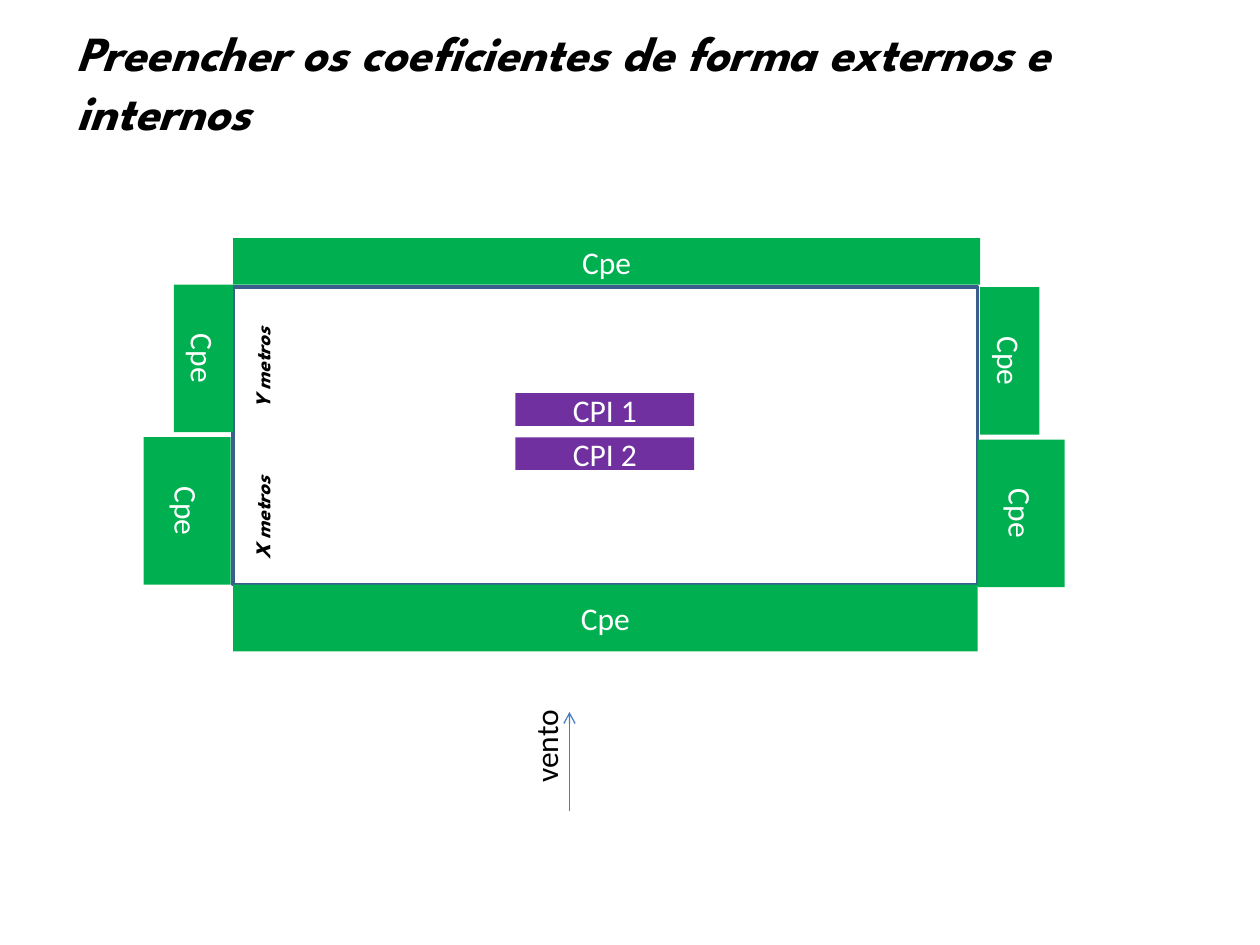
from pptx import Presentation
from pptx.dml.color import RGBColor
from pptx.enum.shapes import MSO_CONNECTOR, MSO_SHAPE
from pptx.enum.text import MSO_ANCHOR, MSO_AUTO_SIZE, PP_ALIGN
from pptx.oxml.ns import qn
from pptx.util import Inches, Pt
from lxml.etree import SubElement

BLACK = RGBColor(0x00, 0x00, 0x00)
WHITE = RGBColor(0xFF, 0xFF, 0xFF)
GREEN = RGBColor(0x00, 0xB0, 0x50)
PURPLE = RGBColor(0x70, 0x30, 0xA0)
WALL_BLUE = RGBColor(0x3A, 0x5F, 0x8C)
ARROW_BLUE = RGBColor(0x4B, 0x7E, 0xBC)

TITLE_ONLY = 5
SIDEWAYS = 270


class WindDiagram:
    display_font = "League Spartan"
    body_font = "Calibri"

    def __init__(self, slide):
        self.slide = slide

    def add_run(self, paragraph, text, size, color, display=False):
        run = paragraph.add_run()
        run.text = text
        font = run.font
        font.name = self.display_font if display else self.body_font
        font.size = Pt(size)
        font.color.rgb = color
        font.bold = font.italic = display

    def place(self, shape, box):
        shape.left, shape.top, shape.width, shape.height = map(Inches, box)

    def title(self, text, box):
        shape = self.slide.shapes.title
        self.place(shape, box)
        frame = shape.text_frame
        frame.word_wrap = True
        frame.auto_size = MSO_AUTO_SIZE.SHAPE_TO_FIT_TEXT
        frame.vertical_anchor = MSO_ANCHOR.TOP
        paragraph = frame.paragraphs[0]
        paragraph.alignment = PP_ALIGN.LEFT
        self.add_run(paragraph, text, 28, BLACK, display=True)

    def rectangle(self, box):
        shape = self.slide.shapes.add_shape(MSO_SHAPE.RECTANGLE, *map(Inches, box))
        shape.shadow.inherit = False
        return shape

    def building(self, box):
        shape = self.rectangle(box)
        shape.fill.background()
        shape.line.color.rgb = WALL_BLUE
        shape.line.width = Pt(2)

    def panel(self, text, box, color, rotation=0):
        """Filled bar whose text runs along its height."""
        shape = self.rectangle(box)
        shape.rotation = rotation
        shape.fill.solid()
        shape.fill.fore_color.rgb = color
        shape.line.fill.background()
        frame = shape.text_frame
        frame.vertical_anchor = MSO_ANCHOR.MIDDLE
        frame._txBody.bodyPr.set("vert", "vert")
        paragraph = frame.paragraphs[0]
        paragraph.alignment = PP_ALIGN.CENTER
        self.add_run(paragraph, text, 18, WHITE)

    def side_label(self, text, box, size, display=False):
        shape = self.slide.shapes.add_textbox(*map(Inches, box))
        shape.rotation = SIDEWAYS
        frame = shape.text_frame
        frame.word_wrap = True
        frame.auto_size = MSO_AUTO_SIZE.SHAPE_TO_FIT_TEXT
        self.add_run(frame.paragraphs[0], text, size, BLACK, display)

    def arrow(self, start, end):
        connector = self.slide.shapes.add_connector(
            MSO_CONNECTOR.STRAIGHT, *map(Inches, start + end))
        connector.line.color.rgb = ARROW_BLUE
        connector.line.width = Pt(0.75)
        properties = connector._element.spPr
        SubElement(properties.find(qn("a:ln")), qn("a:tailEnd"), type="arrow")
        SubElement(properties, qn("a:effectLst"))


def main():
    presentation = Presentation()
    presentation.slide_width = Inches(10)
    presentation.slide_height = Inches(7.5)
    slide = presentation.slides.add_slide(presentation.slide_layouts[TITLE_ONLY])
    diagram = WindDiagram(slide)

    diagram.title("Preencher os coeficientes de forma externos e internos",
                  (0.51, 0.13, 8.11, 1.04))

    # Building plan
    diagram.building((1.85, 2.28, 5.91, 2.36))

    # Wind direction
    diagram.arrow((4.52, 6.44), (4.52, 5.65))
    diagram.side_label("vento", (3.86, 5.64, 0.94, 0.4), 18)

    # External coefficients: back and front walls, then the side walls
    for box in ((4.63, -0.89, 0.37, 5.93), (4.54, 1.95, 0.53, 5.91)):
        diagram.panel("Cpe", box, GREEN, SIDEWAYS)
    for left, top, width in ((1.14, 3.47, 0.69), (1.38, 2.26, 0.47),
                             (7.76, 3.49, 0.69), (7.78, 2.28, 0.47)):
        diagram.panel("Cpe", (left, top, width, 1.17), GREEN)

    # Wall lengths
    for text, top in (("X metros", 3.9), ("Y metros", 2.7)):
        diagram.side_label(text, (1.59, top, 0.98, 0.3), 12, display=True)

    # Internal coefficients
    for text, top in (("CPI 1", 2.54), ("CPI 2", 2.89)):
        diagram.panel(text, (4.67, top, 0.26, 1.42), PURPLE, SIDEWAYS)

    presentation.save("out.pptx")


if __name__ == "__main__":
    main()
